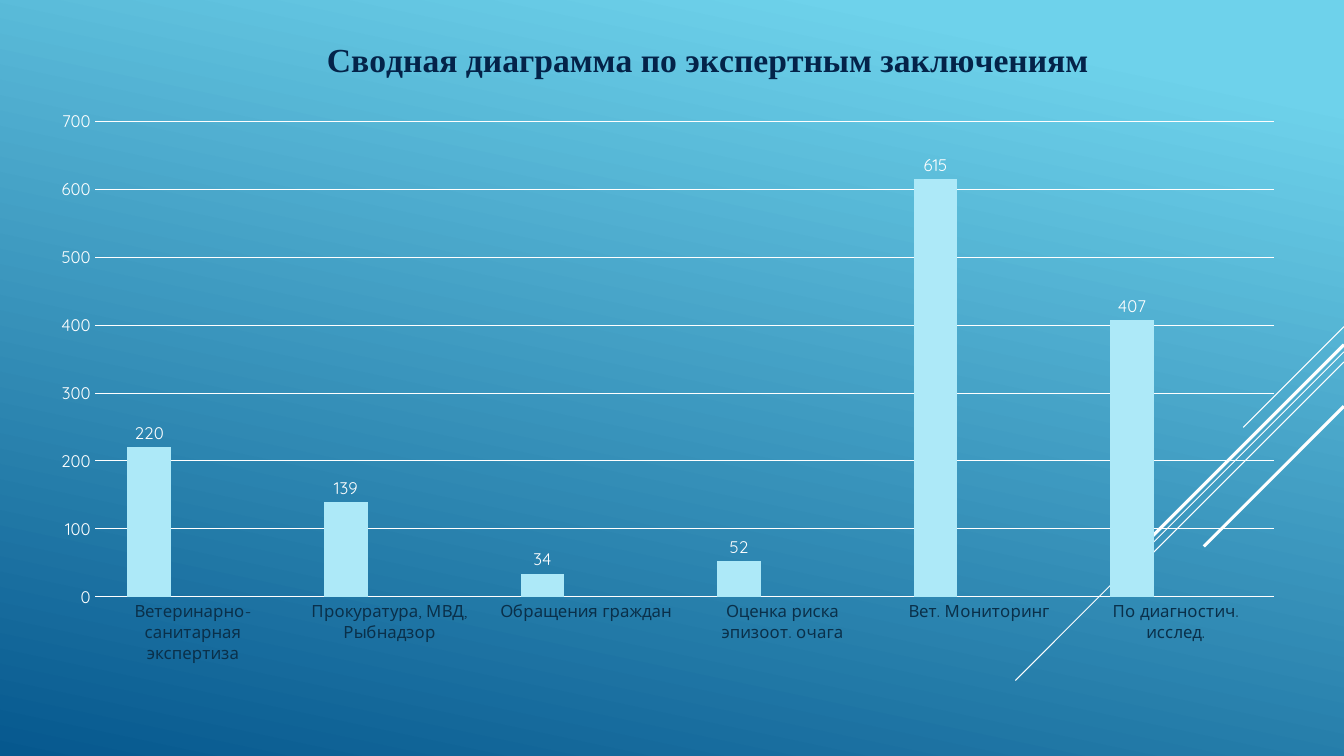
from pptx import Presentation
from pptx import util as u
from pptx.chart import data as cd
from pptx.dml import color
from pptx.enum import chart as ce, shapes
from pptx.oxml import ns, parse_xml

COLORS = {
    "light": "6ED2EB", "deep": "06588E", "white": "FFFFFF", "title": "042349",
    "category": "0A304A", "bar": "ADE9F8", "second": "A50E82", "third": "14967C",
}
WIDTH, HEIGHT = 960, 540
# Diagonal rays: height at the right edge, run to the lower left, line width
RAYS = [
    (233.3, 72, 0.75),
    (251.3, 234.7, 0.75),
    (258.5, 149, 0.75),
    (246.2, 137.5, 2.25),
    (290.2, 100.1, 2.25),
]
TITLE = "Сводная диаграмма по экспертным заключениям"
REPORTS = {
    "Ветеринарно-санитарная экспертиза": 220,
    "Прокуратура, МВД, Рыбнадзор": 139,
    "Обращения граждан": 34,
    "Оценка риска эпизоот. очага": 52,
    "Вет. Мониторинг": 615,
    "По диагностич. исслед.": 407,
}


class Deck:
    body_font = "Quicksand"
    title_font = "Times New Roman"

    def __init__(self):
        self.prs = Presentation()
        self.prs.slide_width, self.prs.slide_height = u.Pt(WIDTH), u.Pt(HEIGHT)
        self.s = self.prs.slides.add_slide(self.prs.slide_layouts[6])

    def rgb(self, name):
        return color.RGBColor.from_string(COLORS[name])

    def style(self, font, name, size, face=None, bold=False):
        font.name, font.size, font.bold = face or self.body_font, u.Pt(size), bold
        font.color.rgb = self.rgb(name)

    def background(self, angle):
        fill = self.s.background.fill
        fill.gradient()
        fill.gradient_angle = angle
        for stop, pos, name in zip(fill.gradient_stops, (0.1, 1), ("light", "deep")):
            stop.position = pos
            stop.color.rgb = self.rgb(name)

    def ray(self, y, run, width):
        ln = self.s.shapes.add_connector(
            shapes.MSO_CONNECTOR.STRAIGHT,
            u.Pt(WIDTH), u.Pt(y), u.Pt(WIDTH - run), u.Pt(y + run))
        ln.line.color.rgb = self.rgb("white")
        ln.line.width = u.Pt(width)
        ln._element.spPr.append(parse_xml(f"<a:effectLst {ns.nsdecls('a')}/>"))

    def layout(self, target, before=None, **box):
        """Place a chart part by fractions of the chart's size."""
        for old in target.findall(ns.qn("c:layout")):
            target.remove(old)
        inner = '<c:layoutTarget val="inner"/>' if "w" in box else ""
        modes = "".join(f'<c:{k}Mode val="edge"/>' for k in "xy")
        sizes = "".join(f'<c:{k} val="{v}"/>' for k, v in box.items())
        el = parse_xml(f"<c:layout {ns.nsdecls('c')}><c:manualLayout>"
                       f"{inner}{modes}{sizes}</c:manualLayout></c:layout>")
        if before is None:
            target.insert(0, el)
        else:
            target.find(ns.qn(before)).addnext(el)

    def axis(self, axis, name):
        axis.major_tick_mark = axis.minor_tick_mark = ce.XL_TICK_MARK.NONE
        axis.format.line.fill.background()
        self.style(axis.tick_labels.font, name, 12)

    def column_chart(self, title, values, x, y, w, h):
        data = cd.CategoryChartData()
        data.categories = list(values)
        data.add_series("Series 1", list(values.values()))
        for name in ("Series 2", "Series 3"):
            data.add_series(name, [None] * len(values))
        ch = self.s.shapes.add_chart(
            ce.XL_CHART_TYPE.COLUMN_CLUSTERED,
            u.Pt(x), u.Pt(y), u.Pt(w), u.Pt(h), data).chart
        self.style(ch.font, "white", 10)
        ch.has_legend = False

        ch.has_title = True
        tf = ch.chart_title.text_frame
        tf.text = title
        self.style(tf.paragraphs[0].runs[0].font, "title", 24, self.title_font, True)
        ch.chart_title.include_in_layout = False
        self.layout(ch.chart_title._element, "c:tx", x=0.226, y=0.015)

        self.axis(ch.category_axis, "category")
        va = ch.value_axis
        self.axis(va, "white")
        va.minimum_scale, va.maximum_scale, va.major_unit = 0, 700, 100
        grid = va.major_gridlines.format.line
        grid.color.rgb = self.rgb("white")
        grid.width = u.Pt(0.75)

        plot = ch.plots[0]
        plot.gap_width, plot.overlap, plot.vary_by_categories = 150, 0, False
        for series, name in zip(plot.series, ("bar", "second", "third")):
            series.format.fill.solid()
            series.format.fill.fore_color.rgb = self.rgb(name)
        labels = plot.series[0].data_labels
        labels.show_value = True
        labels.position = ce.XL_LABEL_POSITION.OUTSIDE_END
        self.style(labels.font, "white", 12)
        area = ch._chartSpace.chart.plotArea
        self.layout(area, x=0.047, y=0.152, w=0.933, h=0.725)


def main():
    deck = Deck()
    deck.background(258)
    for ray in RAYS:
        deck.ray(*ray)
    deck.column_chart(TITLE, REPORTS, 25.2, 15.84, 902.9, 468)
    deck.prs.save("out.pptx")


if __name__ == "__main__":
    main()
